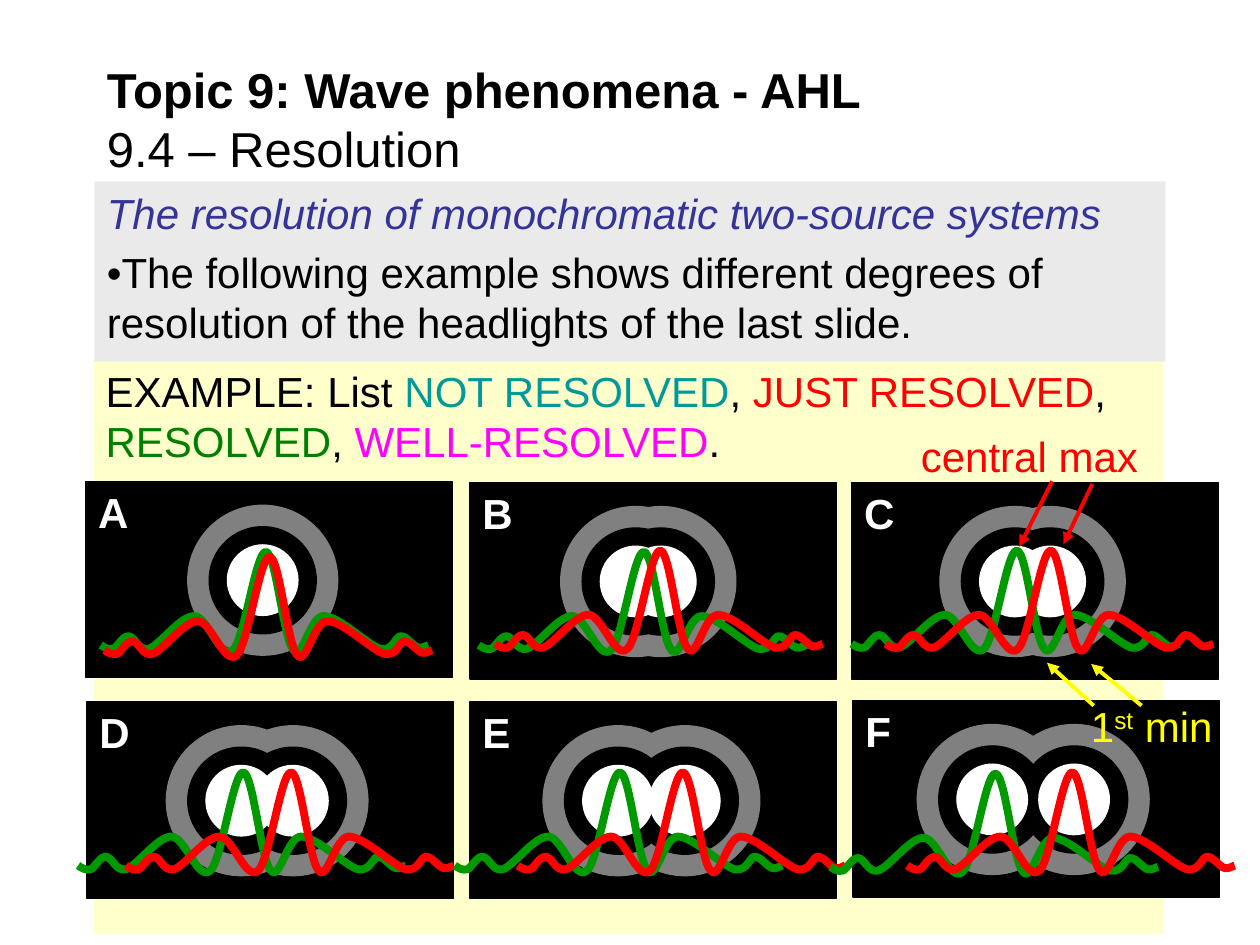
import itertools

import lxml.etree
import pptx
import pptx.dml.color
import pptx.enum.shapes
import pptx.enum.text
import pptx.oxml.ns
import pptx.util

Inches = pptx.util.Inches
Pt = pptx.util.Pt
SHAPES = pptx.enum.shapes.MSO_SHAPE
ANCHORS = pptx.enum.text.MSO_ANCHOR

COLORS = {
    "black": "000000", "white": "FFFFFF", "ring": "808080", "red": "FF0000",
    "green": "009900", "yellow": "FFFF00", "cream": "FFFFCC", "pale": "EAEAEA",
    "navy": "333399", "teal": "009999", "leaf": "008000", "magenta": "FF00FF",
}
BASE = {"name": "Arial", "size": Pt(24), "bold": False, "italic": False}

EXAMPLE = [[
    ("EXAMPLE: List ", "black"), ("NOT RESOLVED", "teal"), (", ", "black"),
    ("JUST RESOLVED", "red"), (", ", "black"), ("RESOLVED", "leaf"),
    (", ", "black"), ("WELL-RESOLVED", "magenta"), (".", "black"),
]]
BODY = [
    [("The resolution of monochromatic two-source systems", "navy", {"italic": True})],
    [("•The following example shows different degrees of resolution "
      "of the headlights of the last slide.", "black")],
]
TITLE = [[
    ("Topic 9: Wave phenomena - AHL\n", "black", {"size": Pt(28), "bold": True}),
    ("9.4 – Resolution", "black", {"size": Pt(28)}),
]]
CENTRAL_MAX = [[("central max", "red")]]
FIRST_MIN = [[("1", "yellow"), ("st", "yellow", {"baseline": 30000}), (" min", "yellow")]]

PANEL_SIZE = (2.91, 1.56)
PANELS = [
    {"letter": "A", "at": (0.68, 3.82), "lights": [1.49],
     "curves": [(0.8, 5.12), (0.83, 5.16)]},
    {"letter": "B", "at": (3.73, 3.83), "lights": [4.45, 4.65],
     "curves": [(3.8, 5.12), (3.93, 5.11)]},
    {"letter": "C", "at": (6.76, 3.83), "lights": [7.46, 7.74],
     "curves": [(6.76, 5.11), (7.03, 5.11)]},
    {"letter": "D", "at": (0.69, 5.57), "lights": [1.32, 1.73],
     "curves": [(0.62, 6.87), (1, 6.87)]},
    {"letter": "E", "at": (3.73, 5.57), "lights": [4.31, 4.84],
     "curves": [(3.61, 6.87), (4.11, 6.87)]},
    {"letter": "F", "at": (6.77, 5.56), "lights": [7.28, 7.93],
     "curves": [(6.59, 6.88), (7.2, 6.87)]},
]
RINGS = [("ring", 1.19), ("black", 0.85), ("white", 0.56)]
RING_DROP = 0.19

CURVE = [
    (0, 0), (0.03, 0.02), (0.06, 0.04), (0.1, 0.03),
    (0.13, 0.02), (0.17, -0.07), (0.22, -0.07),
    (0.27, -0.07), (0.3, 0.05), (0.38, 0.03),
    (0.47, 0), (0.63, -0.23), (0.74, -0.23),
    (0.85, -0.23), (0.95, 0.13), (1.05, 0.04),
    (1.14, -0.04), (1.23, -0.74), (1.31, -0.74),
    (1.39, -0.74), (1.45, -0.04), (1.53, 0.04),
    (1.6, 0.13), (1.66, -0.23), (1.77, -0.23),
    (1.89, -0.23), (2.12, 0), (2.22, 0.03),
    (2.32, 0.05), (2.34, -0.07), (2.38, -0.07),
    (2.43, -0.07), (2.48, 0.01), (2.52, 0.02),
    (2.55, 0.03), (2.59, 0), (2.6, 0),
]
ARROWS = [
    ((8.35, 3.82), (8.09, 4.34), "red"),
    ((8.67, 3.84), (8.44, 4.32), "red"),
    ((8.68, 5.6), (8.31, 5.26), "yellow"),
    ((9.06, 5.6), (8.66, 5.27), "yellow"),
]


def rgb(color):
    return pptx.dml.color.RGBColor.from_string(COLORS[color])


def set_line(line, color, width):
    line.color.rgb = rgb(color)
    line.width = Pt(width)


def add_filled(parent, kind, at, color, outlined=True):
    shape = parent.add_shape(kind, *map(Inches, at))
    shape.shadow.inherit = False
    shape.fill.solid()
    shape.fill.fore_color.rgb = rgb(color)
    if outlined:
        set_line(shape.line, color, 0.75)
    else:
        shape.line.fill.background()
    return shape


def write(shape, paragraphs, anchor=ANCHORS.TOP):
    frame = shape.text_frame
    frame.word_wrap = True
    frame.vertical_anchor = anchor
    for index, spans in enumerate(paragraphs):
        para = frame.add_paragraph() if index else frame.paragraphs[0]
        para.alignment = pptx.enum.text.PP_ALIGN.LEFT
        if index:
            para.space_before = Pt(4.8)
        for text, color, *extra in spans:
            values = {**BASE, **(extra[0] if extra else {})}
            baseline = values.pop("baseline", None)
            span = para.add_run()
            span.text = text.rstrip("\n")
            span.font.color.rgb = rgb(color)
            for name, value in values.items():
                setattr(span.font, name, value)
            if baseline:
                span.font._element.set("baseline", str(baseline))
            if text.endswith("\n"):
                para.add_line_break()


def add_label(page, at, paragraphs, anchor=ANCHORS.TOP):
    write(page.shapes.add_textbox(*map(Inches, at)), paragraphs, anchor)


def add_panel(page, panel):
    group = page.shapes.add_group_shape().shapes
    left, top = panel["at"]
    add_filled(group, SHAPES.RECTANGLE, (left, top, *PANEL_SIZE), "black")
    outer = RINGS[0][1]
    for color, size in RINGS:
        inset = (outer - size) / 2
        for light in panel["lights"]:
            at = (light + inset, top + RING_DROP + inset, size, size)
            add_filled(group, SHAPES.OVAL, at, color)


def add_curve(page, start, color):
    points = [(Inches(start[0] + x), Inches(start[1] + y)) for x, y in CURVE]
    builder = page.shapes.build_freeform(*points[0])
    builder.add_line_segments(points[1:], close=False)
    curve = builder.convert_to_shape()
    curve.shadow.inherit = False
    curve.fill.background()
    set_line(curve.line, color, 4.5)
    segments = iter(curve._element.xpath(".//a:lnTo"))
    for first, second, third in zip(segments, segments, segments):
        first.tag = pptx.oxml.ns.qn("a:cubicBezTo")
        for segment in (second, third):
            first.append(segment[0])
            segment.getparent().remove(segment)


def add_arrow(page, start, end, color):
    arrow = page.shapes.add_connector(
        pptx.enum.shapes.MSO_CONNECTOR.STRAIGHT, *map(Inches, start + end))
    set_line(arrow.line, color, 2.25)
    qn = pptx.oxml.ns.qn
    lxml.etree.SubElement(arrow.line._get_or_add_ln(), qn("a:tailEnd"), type="triangle")
    lxml.etree.SubElement(arrow._element.spPr, qn("a:effectLst"))


def main():
    deck = pptx.Presentation()
    deck.slide_width, deck.slide_height = Inches(10), Inches(7.5)
    page = deck.slides.add_slide(deck.slide_layouts[6])

    for at, color, paragraphs in [
        ((0.74, 2.85, 8.49, 4.56), "cream", EXAMPLE),
        ((0.75, 1.44, 8.5, 1.43), "pale", BODY),
    ]:
        write(add_filled(page.shapes, SHAPES.RECTANGLE, at, color, False), paragraphs)

    for panel in PANELS:
        add_panel(page, panel)
    for panel, index in itertools.product(PANELS, range(2)):
        add_curve(page, panel["curves"][index], ("green", "red")[index])
    for panel in PANELS:
        left, top = panel["at"]
        add_label(page, (left, top - 0.01, 0.45, 0.5),
                  [[(panel["letter"], "white", {"bold": True})]])

    add_label(page, (7.21, 3.37, 2.39, 0.51), CENTRAL_MAX)
    add_label(page, (8.56, 5.51, 1.44, 0.51), FIRST_MIN)
    for arrow in ARROWS:
        add_arrow(page, *arrow)
    add_label(page, (0.75, 0.45, 8.5, 0.98), TITLE, ANCHORS.MIDDLE)

    deck.save("out.pptx")


if __name__ == "__main__":
    main()
